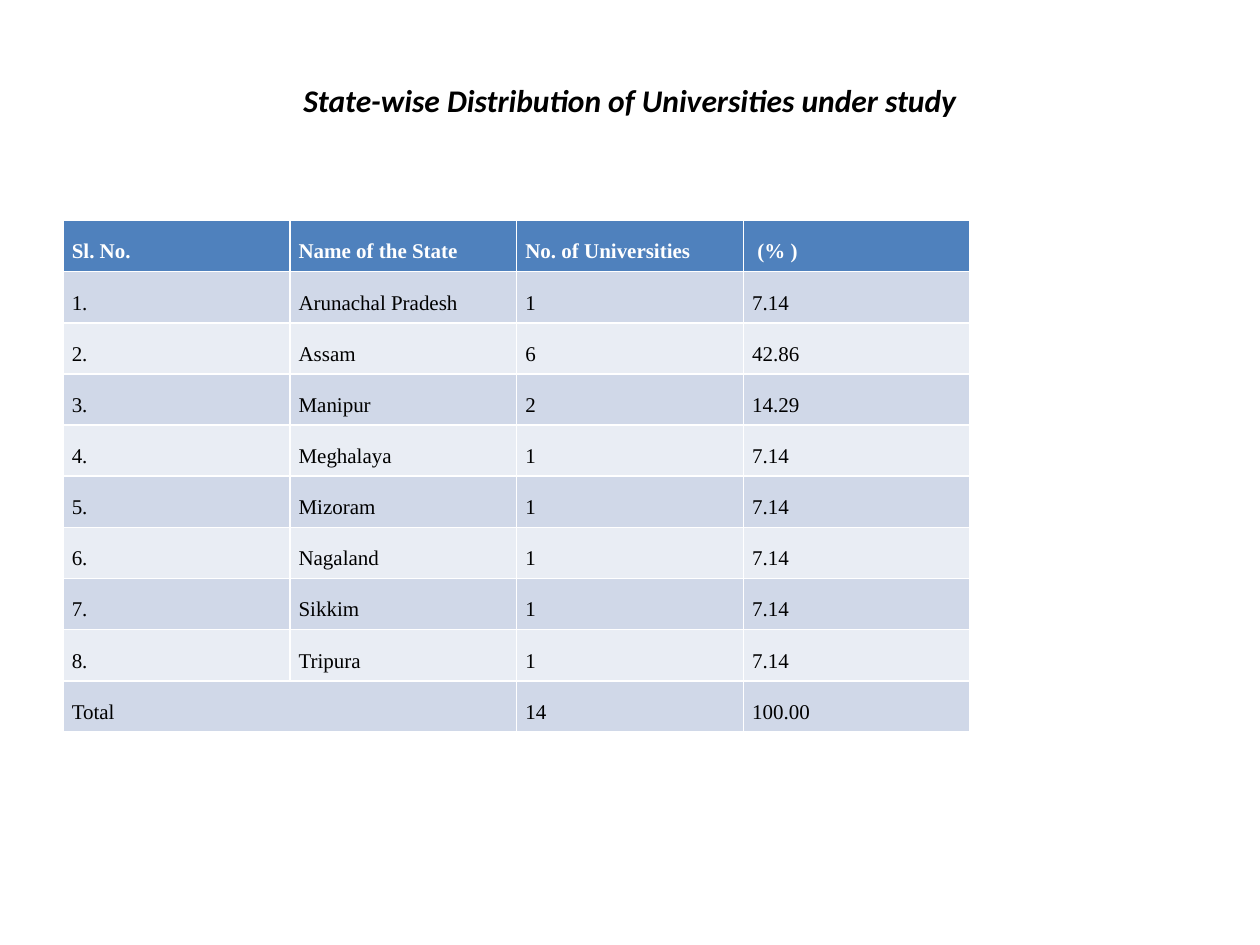
import pptx
import pptx.util
import pptx.dml.color
import pptx.enum.text

TITLE = "State-wise Distribution of Universities under study"
HEAD = ("Sl. No.", "Name of the State", "No. of Universities", " (% )")
STATES = [
    ("Arunachal Pradesh", "1", "7.14"),
    ("Assam", "6", "42.86"),
    ("Manipur", "2", "14.29"),
    ("Meghalaya", "1", "7.14"),
    ("Mizoram", "1", "7.14"),
    ("Nagaland", "1", "7.14"),
    ("Sikkim", "1", "7.14"),
    ("Tripura", "1", "7.14"),
]
TOTAL = ("Total", "", "14", "100.00")
BANDS = ("E9EDF4", "D0D8E8")

Inches, Pt = pptx.util.Inches, pptx.util.Pt
ALIGN = pptx.enum.text.PP_ALIGN
MIDDLE = pptx.enum.text.MSO_ANCHOR.MIDDLE


def color(code):
    return pptx.dml.color.RGBColor.from_string(code)


def write(para, text, face, size, code, bold=False, slant=False):
    run = para.add_run()
    run.text = text
    font = run.font
    font.name, font.size = face, Pt(size)
    font.bold, font.italic = bold, slant
    font.color.rgb = color(code)


def fill(cell, text, row):
    cell.fill.solid()
    cell.fill.fore_color.rgb = color(BANDS[row % 2] if row else "4F81BD")
    cell.vertical_anchor = MIDDLE
    cell.margin_left = cell.margin_right = Inches(0.07)
    cell.margin_top = cell.margin_bottom = 0
    para = cell.text_frame.paragraphs[0]
    para.alignment = ALIGN.JUSTIFY
    para.line_spacing = 1.5
    para.space_before = para.space_after = Pt(6)
    if text:
        write(para, text, "Times New Roman", 12,
              "000000" if row else "FFFFFF", bold=row == 0)


def main():
    deck = pptx.Presentation()
    deck.slide_width, deck.slide_height = Inches(10), Inches(7.5)
    wide = deck.slide_width
    slide = deck.slides.add_slide(deck.slide_layouts[5])

    title = slide.shapes.title
    title.left, title.top = int(wide * 0.05), Inches(0.3)
    title.width, title.height = int(wide * 0.9), Inches(1.25)
    frame = title.text_frame
    frame.vertical_anchor = MIDDLE
    frame.margin_bottom = Inches(0.32)
    para = frame.paragraphs[0]
    para.alignment = ALIGN.CENTER
    write(para, TITLE, "Calibri", 18, "000000", bold=True, slant=True)

    body = [(f"{n}.", *state) for n, state in enumerate(STATES, 1)]
    rows = [HEAD, *body, TOTAL]
    table = slide.shapes.add_table(
        len(rows), len(HEAD), int(wide * 0.05), Inches(1.75),
        int(wide * 0.72), Inches(4.06)).table
    for r, row in enumerate(rows):
        for c, text in enumerate(row):
            fill(table.cell(r, c), text, r)
    last = len(rows) - 1
    table.cell(last, 0).merge(table.cell(last, 1))

    deck.save("out.pptx")


if __name__ == "__main__":
    main()
